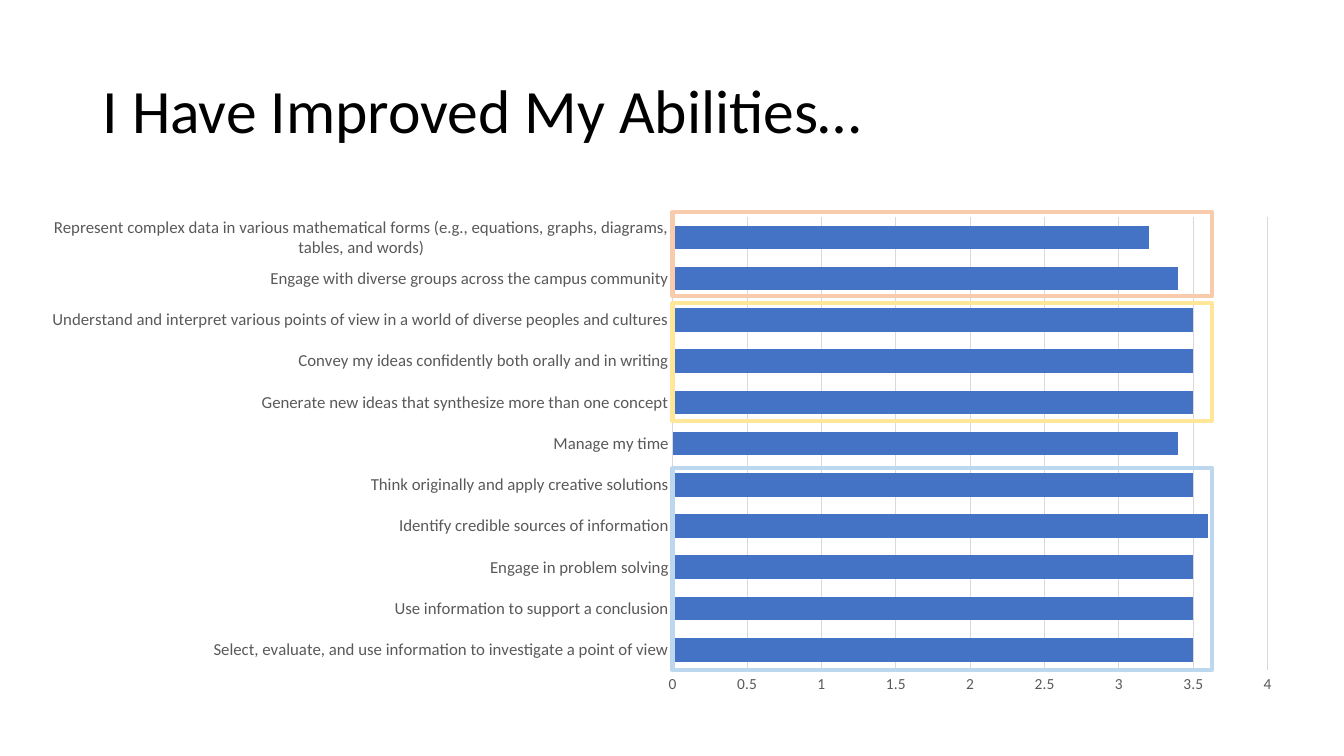
from dataclasses import dataclass

from lxml.etree import SubElement
from pptx import Presentation
from pptx.chart.chart import Chart
from pptx.chart.data import CategoryChartData
from pptx.dml.color import RGBColor
from pptx.enum.chart import XL_CHART_TYPE, XL_TICK_MARK
from pptx.enum.shapes import MSO_SHAPE
from pptx.enum.text import MSO_ANCHOR
from pptx.oxml.ns import qn
from pptx.slide import Slide
from pptx.util import Inches, Pt


@dataclass(frozen=True)
class Theme:
    font: str = "Calibri"
    title: RGBColor = RGBColor(0x00, 0x00, 0x00)
    label: RGBColor = RGBColor(0x59, 0x59, 0x59)
    grid: RGBColor = RGBColor(0xD9, 0xD9, 0xD9)
    bar: RGBColor = RGBColor(0x44, 0x72, 0xC4)
    orange: RGBColor = RGBColor(0xF8, 0xCB, 0xAD)
    yellow: RGBColor = RGBColor(0xFF, 0xE6, 0x99)
    blue: RGBColor = RGBColor(0xBD, 0xD7, 0xEE)
    title_size: int = 44
    category_size: int = 12
    value_size: int = 11
    chart_size: int = 10


@dataclass(frozen=True)
class Ability:
    name: str
    score: float


@dataclass(frozen=True)
class GroupFrame:
    top: float
    height: float
    color: RGBColor


THEME = Theme()
FRAME_LEFT, FRAME_WIDTH = 6.67, 5.35
PLOT_LAYOUT = {"x": 0.502, "y": 0.03, "w": 0.482, "h": 0.895}

ABILITIES = [
    Ability("Select, evaluate, and use information to investigate a point of view", 3.5),
    Ability("Use information to support a conclusion", 3.5),
    Ability("Engage in problem solving", 3.5),
    Ability("Identify credible sources of information", 3.6),
    Ability("Think originally and apply creative solutions", 3.5),
    Ability("Manage my time", 3.4),
    Ability("Generate new ideas that synthesize more than one concept", 3.5),
    Ability("Convey my ideas confidently both orally and in writing", 3.5),
    Ability("Understand and interpret various points of view in a world of diverse "
            "peoples and cultures", 3.5),
    Ability("Engage with diverse groups across the campus community", 3.4),
    Ability("Represent complex data in various mathematical forms (e.g., equations, "
            "graphs, diagrams, tables, and words)", 3.2),
]

FRAMES = [
    GroupFrame(2.1, 0.84, THEME.orange),
    GroupFrame(3.01, 1.17, THEME.yellow),
    GroupFrame(4.64, 2.01, THEME.blue),
]


def add_title(s: Slide, text: str) -> None:
    tf = s.shapes.add_textbox(Inches(0.92), Inches(0.4), Inches(11.5), Inches(1.45)).text_frame
    tf.word_wrap = True
    tf.vertical_anchor = MSO_ANCHOR.MIDDLE
    tf.text = text
    p = tf.paragraphs[0]
    p.line_spacing = 0.9
    font = p.runs[0].font
    font.name = THEME.font
    font.size = Pt(THEME.title_size)
    font.color.rgb = THEME.title


def set_plot_layout(chart: Chart) -> None:
    plot_area = chart.element.find(f".//{qn('c:plotArea')}")
    for layout in plot_area.findall(qn("c:layout")):
        plot_area.remove(layout)
    layout = SubElement(plot_area, qn("c:layout"))
    plot_area.insert(0, layout)
    manual = SubElement(layout, qn("c:manualLayout"))
    SubElement(manual, qn("c:layoutTarget")).set("val", "inner")
    for side in ("x", "y"):
        SubElement(manual, qn(f"c:{side}Mode")).set("val", "edge")
    for side, fraction in PLOT_LAYOUT.items():
        SubElement(manual, qn(f"c:{side}")).set("val", str(fraction))


def add_ability_chart(s: Slide, abilities: list[Ability]) -> None:
    data = CategoryChartData()
    data.categories = [ability.name for ability in abilities]
    data.add_series("Series 1", [ability.score for ability in abilities])
    chart = s.shapes.add_chart(
        XL_CHART_TYPE.BAR_CLUSTERED,
        Inches(0.52), Inches(2), Inches(12.25), Inches(5.03), data,
    ).chart
    chart.has_legend = False
    chart.has_title = False
    chart.font.name = THEME.font
    chart.font.size = Pt(THEME.chart_size)
    chart.font.color.rgb = THEME.title

    plot = chart.plots[0]
    plot.gap_width = 74
    plot.vary_by_categories = False
    fill = plot.series[0].format.fill
    fill.solid()
    fill.fore_color.rgb = THEME.bar

    category_axis, value_axis = chart.category_axis, chart.value_axis
    for axis, size in ((category_axis, THEME.category_size), (value_axis, THEME.value_size)):
        axis.major_tick_mark = axis.minor_tick_mark = XL_TICK_MARK.NONE
        font = axis.tick_labels.font
        font.name = THEME.font
        font.size = Pt(size)
        font.color.rgb = THEME.label

    value_axis.minimum_scale = 0
    value_axis.maximum_scale = 4
    value_axis.major_unit = 0.5
    value_axis.has_major_gridlines = True
    value_axis.format.line.fill.background()
    for line in (category_axis.format.line, value_axis.major_gridlines.format.line):
        line.color.rgb = THEME.grid
        line.width = Pt(0.75)
    set_plot_layout(chart)


def add_group_frame(s: Slide, frame: GroupFrame) -> None:
    sp = s.shapes.add_shape(
        MSO_SHAPE.RECTANGLE,
        Inches(FRAME_LEFT), Inches(frame.top), Inches(FRAME_WIDTH), Inches(frame.height),
    )
    sp.shadow.inherit = False
    sp.fill.background()
    sp.line.color.rgb = frame.color
    sp.line.width = Pt(3)


def main() -> None:
    prs = Presentation()
    prs.slide_width, prs.slide_height = Inches(13.33), Inches(7.5)
    s = prs.slides.add_slide(prs.slide_layouts[6])
    add_ability_chart(s, ABILITIES)
    add_title(s, "I Have Improved My Abilities…")
    for frame in FRAMES:
        add_group_frame(s, frame)
    prs.save("out.pptx")


if __name__ == "__main__":
    main()
